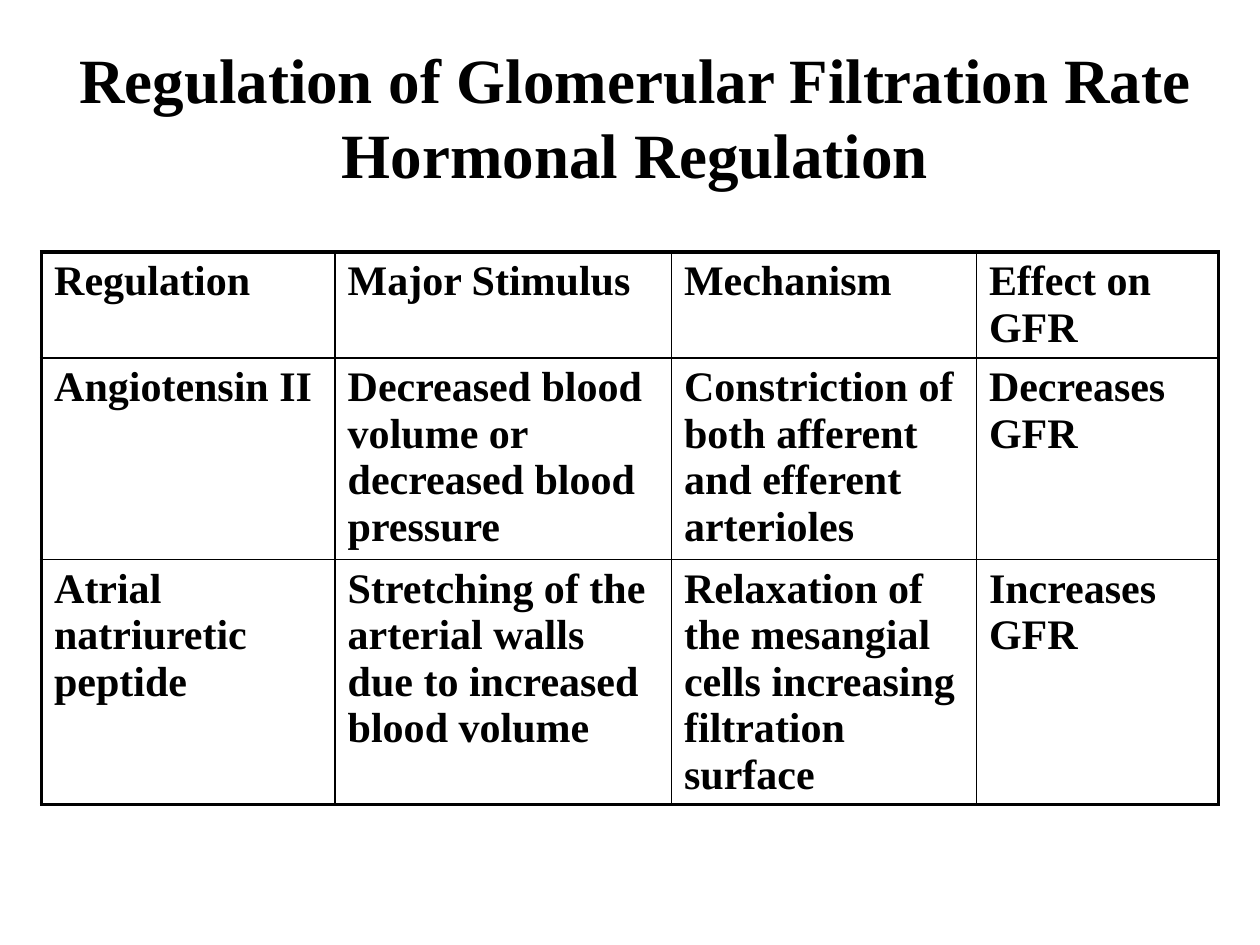
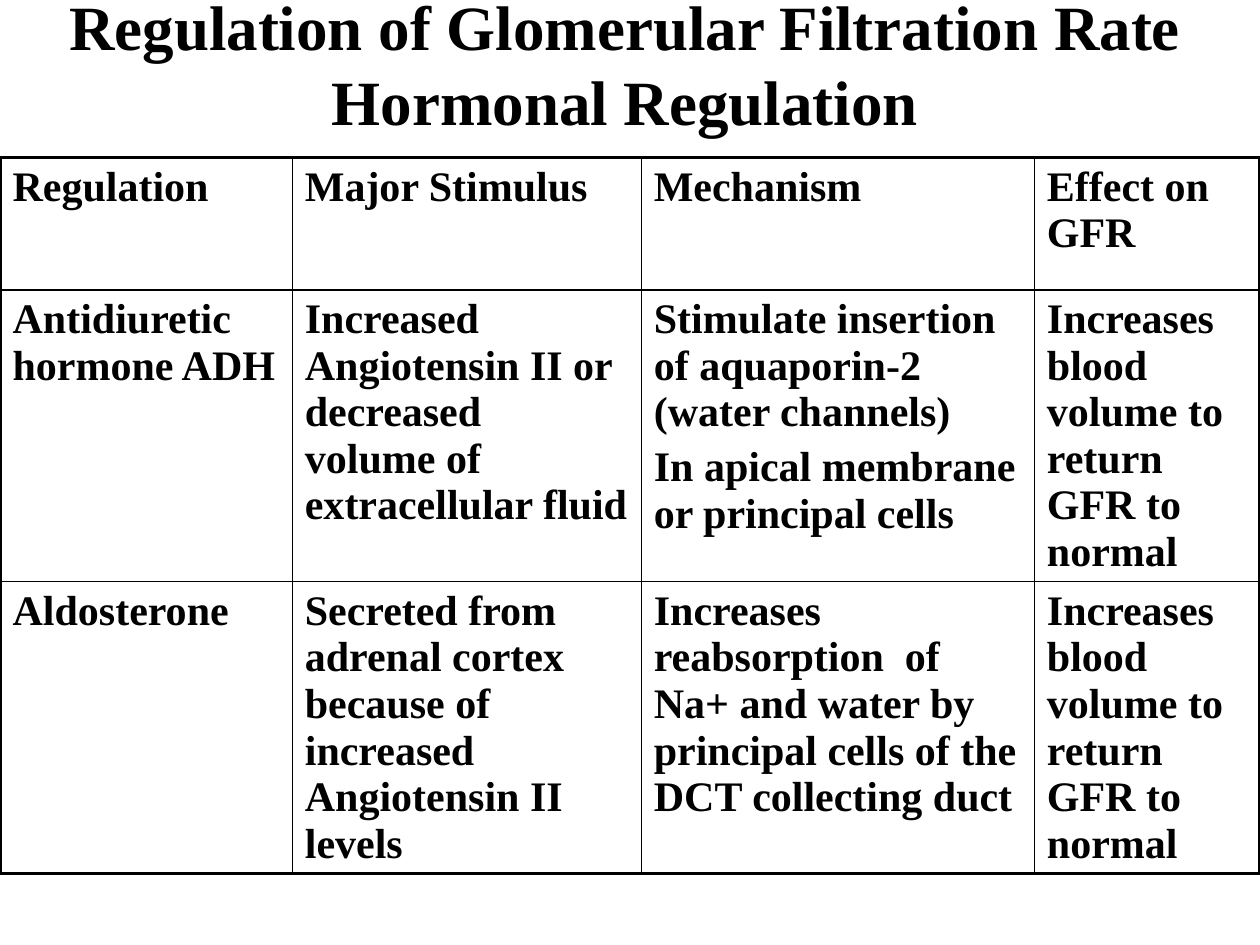
"""Build two slides of tables on the hormonal regulation of glomerular filtration."""
import lxml.etree
import pptx
import pptx.dml.color
import pptx.enum.text
import pptx.oxml.ns
import pptx.util

FONT = "Times New Roman"
INK = "000000"
OUTER_LINE, INNER_LINE = 2.25, 1
TITLE_LINES = ["Regulation of Glomerular Filtration Rate", "Hormonal Regulation"]
TITLE_WIDTH, TITLE_HEIGHT = 9.42, 1
HEADINGS = ["Regulation", "Major Stimulus", "Mechanism", "Effect on GFR"]

SLIDES = [
    {
        "title_at": (0.33, 0.42),
        "table_at": (0.33, 2),
        "columns": [2.33, 2.67, 2.42, 1.92],
        "rows": [0.84, 1.6, 1.94],
        "hormones": [
            ["Angiotensin II",
             "Decreased blood volume or decreased blood pressure",
             "Constriction of both afferent and efferent arterioles",
             "Decreases GFR"],
            ["Atrial natriuretic peptide",
             "Stretching of the arterial walls due to increased blood volume",
             "Relaxation of the mesangial cells increasing filtration surface",
             "Increases GFR"],
        ],
    },
    {
        "title_at": (0.25, 0),
        "table_at": (0, 1.25),
        "columns": [2.32, 2.77, 3.12, 1.79],
        "rows": [1.05, 2.31, 2.31],
        "hormones": [
            ["Antidiuretic hormone ADH",
             "Increased Angiotensin II or  decreased  volume of extracellular fluid",
             "Stimulate insertion of aquaporin-2 (water channels)\n"
             "In apical membrane or principal cells",
             "Increases blood volume to return GFR to normal"],
            ["Aldosterone",
             "Secreted from adrenal cortex because of increased Angiotensin II levels",
             "Increases reabsorption  of Na+ and water by principal cells of the "
             "DCT collecting duct",
             "Increases blood volume to return GFR to normal"],
        ],
    },
]


def add_run(paragraph, text, size, color=INK):
    run = paragraph.add_run()
    run.text = text
    run.font.name = FONT
    run.font.size = pptx.util.Pt(size)
    run.font.bold = True
    run.font.color.rgb = pptx.dml.color.RGBColor.from_string(color)


def add_border(cell, side, width, color=INK):
    qualified = pptx.oxml.ns.qn
    properties = cell._tc.get_or_add_tcPr()
    line = lxml.etree.SubElement(properties, qualified(f"a:ln{side}"), w=str(pptx.util.Pt(width)))
    fill = lxml.etree.SubElement(line, qualified("a:solidFill"))
    lxml.etree.SubElement(fill, qualified("a:srgbClr"), val=color)


presentation = pptx.Presentation()
presentation.slide_width = pptx.util.Inches(10)
presentation.slide_height = pptx.util.Inches(7.5)

for content in SLIDES:
    slide = presentation.slides.add_slide(presentation.slide_layouts[6])

    title_area = (*content["title_at"], TITLE_WIDTH, TITLE_HEIGHT)
    title = slide.shapes.add_textbox(*map(pptx.util.Inches, title_area)).text_frame
    title.word_wrap = True
    title.vertical_anchor = pptx.enum.text.MSO_ANCHOR.MIDDLE
    paragraph = title.paragraphs[0]
    paragraph.alignment = pptx.enum.text.PP_ALIGN.CENTER
    add_run(paragraph, TITLE_LINES[0], 36)
    paragraph.add_line_break()
    add_run(paragraph, TITLE_LINES[1], 36)

    columns, rows = content["columns"], content["rows"]
    table_area = (*content["table_at"], sum(columns), sum(rows))
    table = slide.shapes.add_table(
        len(rows), len(columns), *map(pptx.util.Inches, table_area)).table
    table.first_row = False
    table.horz_banding = False
    for column, width in zip(table.columns, columns):
        column.width = pptx.util.Inches(width)
    for row, height in zip(table.rows, rows):
        row.height = pptx.util.Inches(height)

    for row_index, texts in enumerate([HEADINGS, *content["hormones"]]):
        for column_index, text in enumerate(texts):
            cell = table.cell(row_index, column_index)
            outer_sides = {
                "L": column_index == 0,
                "R": column_index == len(columns) - 1,
                "T": row_index == 0,
                "B": row_index == len(rows) - 1,
            }
            for side, is_outer in outer_sides.items():
                add_border(cell, side, OUTER_LINE if is_outer else INNER_LINE)
            cell.fill.background()
            for index, sentence in enumerate(text.split("\n")):
                if index == 0:
                    paragraph = cell.text_frame.paragraphs[0]
                else:
                    paragraph = cell.text_frame.add_paragraph()
                    paragraph.space_before = pptx.util.Pt(4.8)
                paragraph.line_spacing = pptx.util.Pt(26.6)
                add_run(paragraph, sentence, 24)

presentation.save("out.pptx")
